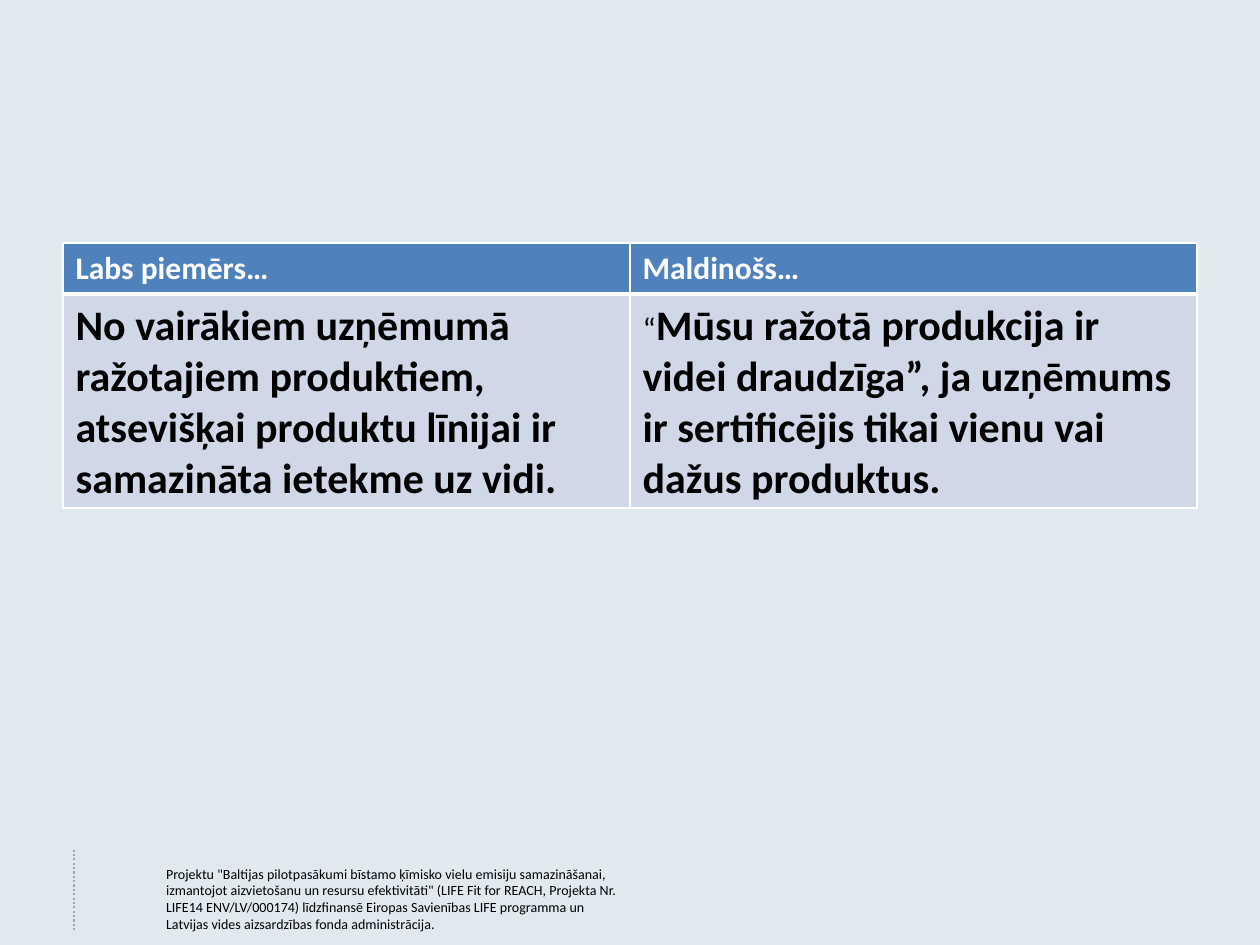
"""Build a slide comparing a good claim with a misleading one."""
from dataclasses import dataclass

from lxml import etree
from pptx import Presentation
from pptx.dml.color import RGBColor
from pptx.enum.dml import MSO_LINE
from pptx.enum.shapes import MSO_CONNECTOR
from pptx.oxml.ns import qn
from pptx.util import Emu, Inches, Pt

WHITE = RGBColor(0xFF, 0xFF, 0xFF)
BLACK = RGBColor(0, 0, 0)
PALE = RGBColor(0xE0, 0xE9, 0xF0)
BLUE = RGBColor(0x4F, 0x81, 0xBD)
MIST = RGBColor(0xD0, 0xD8, 0xE8)
GREY = RGBColor(0xA6, 0xA6, 0xA6)
DOTS = MSO_LINE.ROUND_DOT
STRAIGHT = MSO_CONNECTOR.STRAIGHT
WIDE, HIGH = Inches(10), Inches(7.5)
FACE = "Calibri"


@dataclass(frozen=True)
class Part:
    text: str
    size: int
    bold: bool = True


@dataclass(frozen=True)
class Row:
    cells: tuple[tuple[Part, ...], ...]
    high: float
    fill: RGBColor
    ink: RGBColor
    base: int


ROWS = (
    Row(((Part("Labs piemērs…", 18),), (Part("Maldinošs…", 18),)),
        0.054, BLUE, WHITE, 3),
    Row(((Part("No vairākiem uzņēmumā ražotajiem produktiem, atsevišķai "
               "produktu līnijai ir samazināta ietekme uz vidi.", 24),),
         (Part("“", 18, False),
          Part("Mūsu ražotā produkcija ir videi draudzīga”, ja uzņēmums ir "
               "sertificējis tikai vienu vai dažus produktus.", 24))),
        0.226, MIST, BLACK, 1),
)
CREDIT = Part(
    "Projektu \"Baltijas pilotpasākumi bīstamo ķīmisko vielu emisiju "
    "samazināšanai, izmantojot aizvietošanu un resursu efektivitāti\" "
    "(LIFE Fit for REACH, Projekta Nr. LIFE14 ENV/LV/000174) līdzfinansē "
    "Eiropas Savienības LIFE programma un Latvijas vides aizsardzības fonda "
    "administrācija.", 8, False)


def across(share: float) -> Emu:
    """Turn a share of the slide's width into a length."""
    return Emu(round(WIDE * share))


def down(share: float) -> Emu:
    """Turn a share of the slide's height into a length."""
    return Emu(round(HIGH * share))


def write(frame, parts: tuple[Part, ...], ink: RGBColor) -> None:
    """Write the parts as runs of the frame's first paragraph."""
    for part in parts:
        run = frame.paragraphs[0].add_run()
        run.text = part.text
        style = {"name": FACE, "size": Pt(part.size), "bold": part.bold}
        for key, value in style.items():
            setattr(run.font, key, value)
        run.font.color.rgb = ink


def edge(cell, widths: dict[str, int]) -> None:
    """Give a cell white borders of the given point widths."""
    props = cell._tc.get_or_add_tcPr()
    for spot, (side, width) in enumerate(widths.items()):
        line = etree.Element(qn(f"a:ln{side}"), w=str(Pt(width)))
        fill = etree.SubElement(line, qn("a:solidFill"))
        etree.SubElement(fill, qn("a:srgbClr"), val=str(WHITE))
        props.insert(spot, line)


def draw_table(slide, rows: tuple[Row, ...]) -> None:
    """Draw the two-column comparison."""
    total = sum(row.high for row in rows)
    table = slide.shapes.add_table(
        len(rows), len(rows[0].cells), across(0.05), down(0.257),
        across(0.9), down(total)).table
    top = 1
    for r, row in enumerate(rows):
        table.rows[r].height = down(row.high)
        for c, parts in enumerate(row.cells):
            cell = table.cell(r, c)
            cell.fill.solid()
            cell.fill.fore_color.rgb = row.fill
            edge(cell, {"L": 1, "R": 1, "T": top, "B": row.base})
            write(cell.text_frame, parts, row.ink)
        top = row.base


def draw_foot(slide) -> None:
    """Draw the dotted rule and the funding credit."""
    rule = slide.shapes.add_connector(
        STRAIGHT, across(0.059), down(0.899), across(0.059), down(0.985))
    rule.line.color.rgb = GREY
    rule.line.width = Pt(1.25)
    rule.line.dash_style = DOTS
    etree.SubElement(rule._element.spPr, qn("a:effectLst"))
    box = slide.shapes.add_textbox(
        across(0.122), down(0.909), across(0.386), down(0.085))
    box.text_frame.word_wrap = True
    write(box.text_frame, (CREDIT,), BLACK)


def main() -> None:
    """Build and save the slide."""
    deck = Presentation()
    deck.slide_width, deck.slide_height = WIDE, HIGH
    slide = deck.slides.add_slide(deck.slide_layouts[6])
    slide.background.fill.solid()
    slide.background.fill.fore_color.rgb = PALE
    draw_foot(slide)
    draw_table(slide, ROWS)
    deck.save("out.pptx")


if __name__ == "__main__":
    main()
